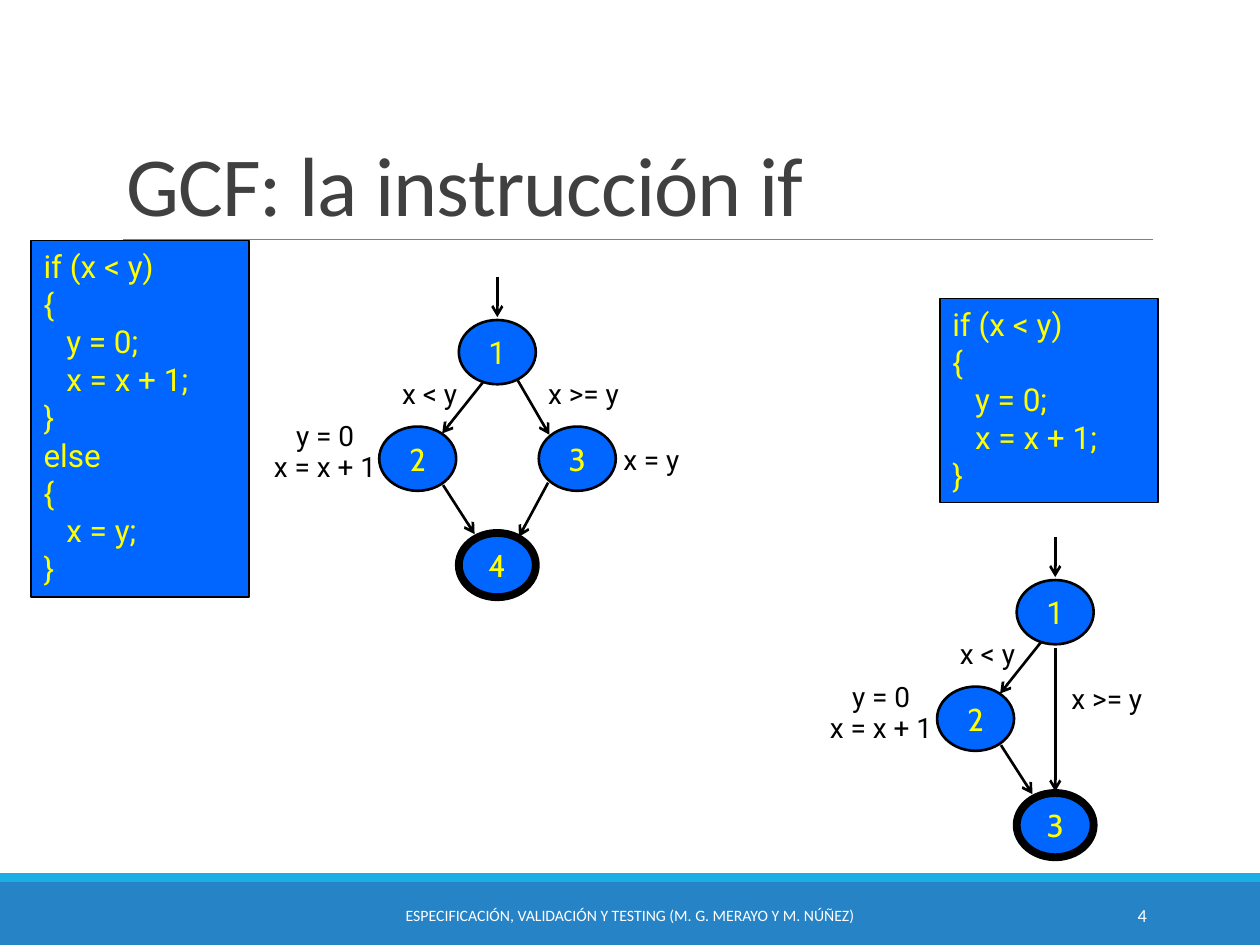
from lxml import etree
from pptx import Presentation
from pptx.dml.color import RGBColor
from pptx.enum.shapes import MSO_CONNECTOR, MSO_SHAPE
from pptx.enum.text import MSO_ANCHOR, PP_ALIGN
from pptx.oxml.ns import qn
from pptx.util import Pt

RECT, OVAL = MSO_SHAPE.RECTANGLE, MSO_SHAPE.OVAL
LINE = MSO_CONNECTOR.STRAIGHT
LEFT, MID, RIGHT = PP_ALIGN.LEFT, PP_ALIGN.CENTER, PP_ALIGN.RIGHT
TOP, CENTER, BASE = MSO_ANCHOR.TOP, MSO_ANCHOR.MIDDLE, MSO_ANCHOR.BOTTOM

COLORS = {"bar": "2683C6", "strip": "1CADE4", "rule": "808080",
          "title": "404040", "fill": "0066FF", "code": "FFFF00",
          "ink": "000000", "white": "FFFFFF"}
INDENT = 13


def color(name):
    return RGBColor.from_string(COLORS[name])


def write(shape, text, size=16, font="Roboto", ink="ink", align=LEFT,
          anchor=TOP, lead=None, gap=0, track=0, inset=None):
    """Write lines of text; a leading tab indents the line."""
    frame = shape.text_frame
    frame.word_wrap = True
    frame.vertical_anchor = anchor
    if inset is not None:
        frame.margin_left = frame.margin_right = Pt(inset)
        frame.margin_top = frame.margin_bottom = Pt(inset)
    for i, line in enumerate(text.split("\n")):
        para = frame.add_paragraph() if i else frame.paragraphs[0]
        para.alignment = align
        if lead:
            para.line_spacing = lead
        if i and gap:
            para.space_before = Pt(gap)
        if line.startswith("\t"):
            para._p.get_or_add_pPr().set("marL", str(Pt(INDENT)))
        run = para.add_run()
        run.text = line.strip()
        run.font.size = Pt(size)
        run.font.name = font
        run.font.color.rgb = color(ink)
        if track:
            run._r.get_or_add_rPr().set("spc", str(track))


class Board:
    """Style and current slide; a group may take the new shapes."""

    def __init__(self, slide):
        self.slide = slide
        self.shapes = slide.shapes

    def group(self):
        self.shapes = self.slide.shapes.add_group_shape().shapes

    def ungroup(self):
        self.shapes = self.slide.shapes

    def shape(self, kind, x, y, w, h, fill, width=0):
        shape = self.shapes.add_shape(kind, Pt(x), Pt(y), Pt(w), Pt(h))
        shape.shadow.inherit = False
        shape.fill.solid()
        shape.fill.fore_color.rgb = color(fill)
        if width:
            shape.line.color.rgb = color("ink")
            shape.line.width = Pt(width)
        else:
            shape.line.fill.background()
        return shape

    def text(self, x, y, w, h, text, **style):
        box = self.shapes.add_textbox(Pt(x), Pt(y), Pt(w), Pt(h))
        write(box, text, **style)

    def code(self, x, y, w, h, text):
        box = self.shape(RECT, x, y, w, h, "fill", 1)
        write(box, text, size=18, ink="code")

    def node(self, x, y, text, font="Cabin", width=1.5):
        w, h = 44, 36.7
        oval = self.shape(OVAL, x - w / 2, y - h / 2, w, h, "fill", width)
        write(oval, text, size=18, font=font, ink="code", align=MID,
              anchor=CENTER, inset=0)

    def label(self, x, y, text):
        w, h, style = 70, 26.6, {}
        if "\n" in text:
            w, h, style = 80, 36.7, {"lead": 0.5, "gap": 8}
        self.text(x - w / 2, y - h / 2, w, h, text, align=MID, **style)

    def line(self, x1, y1, x2, y2, ink="ink", width=1.5, arrow=True):
        line = self.shapes.add_connector(LINE, Pt(x1), Pt(y1), Pt(x2), Pt(y2))
        line.line.color.rgb = color(ink)
        line.line.width = Pt(width)
        if arrow:
            etree.SubElement(line.line._get_or_add_ln(), qn("a:tailEnd"),
                             type="arrow")
        etree.SubElement(line._element.spPr, qn("a:effectLst"))

    def graph(self, x, y, last, edges, labels, nodes=()):
        """Draw a flow graph around the centre of its first node."""
        self.group()
        self.node(x, y + 121.7, last, width=4.5)
        self.node(x, y, "1", font="Roboto")
        for dx, name in ((-45.5, "2"), *nodes):
            self.node(x + dx, y + 60.9, name)
        for x1, y1, x2, y2 in SHARED + edges:
            self.line(x + x1, y + y1, x + x2, y + y2)
        for dx, dy, text in labels:
            self.label(x + dx, y + dy, text)
        self.ungroup()


# Edges found in both graphs: entry, 1 to 2, 2 to last
SHARED = [(0, -43, 0, -20), (-8, 17, -31.5, 46.5), (-31, 76, -13, 104)]
THEN = "if (x < y)\n{\n\ty = 0;\n\tx = x + 1;\n}"
ELSE = "\nelse\n{\n\tx = y;\n}"
LESS = (-38.7, 23.8, "x < y")
BODY = "y = 0\nx = x + 1"


def main():
    deck = Presentation()
    deck.slide_width, deck.slide_height = Pt(720), Pt(540)
    board = Board(deck.slides.add_slide(deck.slide_layouts[6]))

    # Footer bars and title
    board.shape(RECT, 0, 504, 720, 36, "bar")
    board.shape(RECT, 0, 499, 720, 5, "strip")
    board.line(70.5, 136.8, 659, 136.8, ink="rule", width=0.5, arrow=False)
    board.text(65, 22.3, 594, 114.5, "GCF: la instrucción if", size=48,
               font="Calibri", ink="title", anchor=BASE, lead=0.85, track=-50)

    # if with else
    board.code(17.8, 137.5, 124.6, 203.8, THEN + ELSE)
    board.graph(284.2, 201.2, "4",
                [(11.7, 16.2, 29.7, 47.2), (29, 74.6, 12.4, 105.5)],
                [LESS, (49.2, 23.8, "x >= y"), (88, 61.2, "x = y"),
                 (-98.4, 61.2, BODY)],
                nodes=[(45.7, "3")])

    # if without else
    board.code(537.1, 170.6, 124.6, 116.6, THEN)
    board.graph(603, 349.8, "3", [(0, 20.5, 0, 102.5)],
                [LESS, (29.5, 49.5, "x >= y"), (-99.5, 61.5, BODY)])

    # Footer text
    foot = {"font": "Calibri", "ink": "white", "anchor": CENTER}
    board.text(217.4, 508.5, 285, 28.8,
               "ESPECIFICACIÓN, VALIDACIÓN Y TESTING (M. G. MERAYO Y M. NÚÑEZ)",
               size=9, align=MID, **foot)
    board.text(584.6, 508.5, 77.8, 28.8, "4", size=10.5, align=RIGHT, **foot)

    deck.save("out.pptx")


if __name__ == "__main__":
    main()
